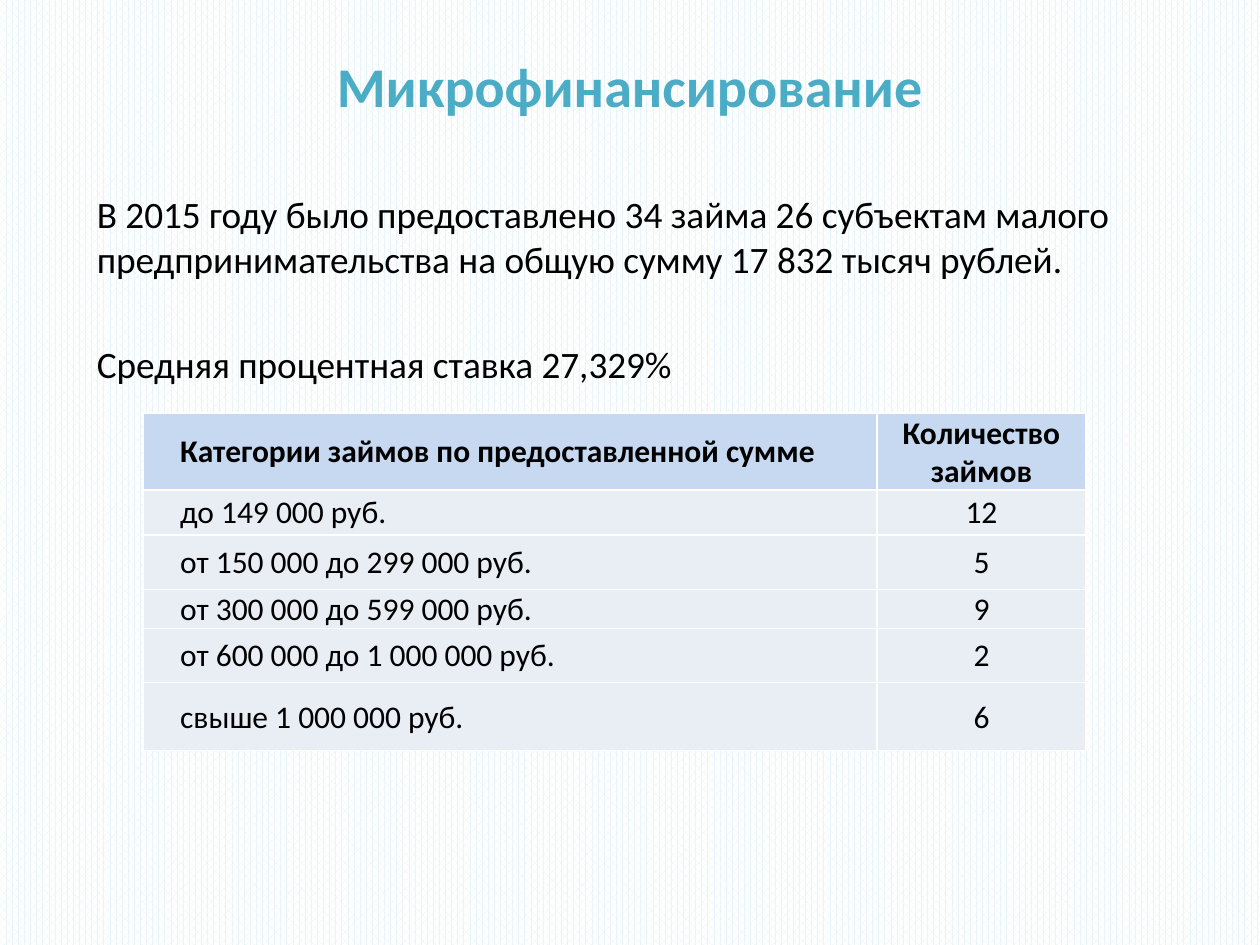
from typing import NamedTuple

from lxml import etree
from pptx import Presentation
from pptx.dml.color import RGBColor
from pptx.enum.dml import MSO_PATTERN
from pptx.enum.text import MSO_ANCHOR, PP_ALIGN
from pptx.oxml.ns import qn
from pptx.util import Inches, Pt

LEFT, CENTER = PP_ALIGN.LEFT, PP_ALIGN.CENTER
MIDDLE, TOP = MSO_ANCHOR.MIDDLE, MSO_ANCHOR.TOP
DOTS = MSO_PATTERN.PERCENT_70

FONT = "Calibri"
W, H = 10, 7.5
COLORS = {
    "title": "4BACC6",
    "text": "000000",
    "header": "C6D9F1",
    "row": "E9EDF4",
    "white": "FFFFFF",
    "dots": "E8F4F8",
}


class Box(NamedTuple):
    """Place and size as shares of the slide."""
    x: float
    y: float
    w: float
    h: float

    def emu(self) -> tuple:
        return (Inches(self.x * W), Inches(self.y * H),
                Inches(self.w * W), Inches(self.h * H))


class LoanRow(NamedTuple):
    category: str
    count: str
    height: float  # inches


TITLE_BOX = Box(0.05, 0.04, 0.9, 0.1)
BODY_BOX = Box(0.067, 0.196, 0.898, 0.2)
TABLE_BOX = Box(0.114, 0.437, 0.748, 0.357)
COLUMN_SHARES = (0.778, 0.222)
CATEGORY_INDENT = 0.29

LOANS = [
    LoanRow("Категории займов по предоставленной сумме", "Количество займов", 0.61),
    LoanRow("до 149 000 руб.", "12", 0.36),
    LoanRow("от 150 000 до 299 000 руб.", "5", 0.43),
    LoanRow("от 300 000 до 599 000 руб.", "9", 0.31),
    LoanRow("от 600 000 до 1 000 000 руб.", "2", 0.43),
    LoanRow("свыше 1 000 000 руб.", "6", 0.54),
]


def rgb(name: str) -> RGBColor:
    return RGBColor.from_string(COLORS[name])


def write(p, text: str, *, size: float, color: str = "text",
          bold: bool = False, align=LEFT, before: float = 0) -> None:
    p.alignment = align
    p.space_before = Pt(before)
    r = p.add_run()
    r.text = text
    r.font.name, r.font.size, r.font.bold = FONT, Pt(size), bold
    r.font.color.rgb = rgb(color)


def add_borders(cell, color: str, width: float) -> None:
    tc_pr = cell._tc.get_or_add_tcPr()
    for i, side in enumerate(("a:lnL", "a:lnR", "a:lnT", "a:lnB")):
        ln = etree.Element(qn(side), w=str(Pt(width)))
        fill = etree.SubElement(ln, qn("a:solidFill"))
        etree.SubElement(fill, qn("a:srgbClr"), val=COLORS[color])
        tc_pr.insert(i, ln)  # borders come before the fill


def fill_cell(cell, text: str, *, header: bool, align, indent: float) -> None:
    cell.fill.solid()
    cell.fill.fore_color.rgb = rgb("header" if header else "row")
    cell.vertical_anchor = MIDDLE
    cell.margin_left = Inches(indent)
    cell.margin_right = cell.margin_top = Inches(0.01)
    cell.margin_bottom = 0
    write(cell.text_frame.paragraphs[0], text, size=18, bold=header, align=align)
    add_borders(cell, "white", 1)


def add_loan_table(slide, box: Box, loans: list[LoanRow]) -> None:
    table = slide.shapes.add_table(len(loans), len(COLUMN_SHARES), *box.emu()).table
    for column, share in zip(table.columns, COLUMN_SHARES):
        column.width = Inches(box.w * W * share)
    for i, loan in enumerate(loans):
        table.rows[i].height = Inches(loan.height)
        header = i == 0
        fill_cell(table.cell(i, 0), loan.category, header=header,
                  align=LEFT, indent=CATEGORY_INDENT)
        fill_cell(table.cell(i, 1), loan.count, header=header,
                  align=CENTER, indent=0.01)


def main() -> None:
    prs = Presentation()
    prs.slide_width, prs.slide_height = Inches(W), Inches(H)
    slide = prs.slides.add_slide(prs.slide_layouts[5])

    # Background
    bg = slide.background.fill
    bg.patterned()
    bg.pattern = DOTS
    bg.fore_color.rgb, bg.back_color.rgb = rgb("dots"), rgb("white")

    # Title
    title = slide.shapes.title
    title.left, title.top, title.width, title.height = TITLE_BOX.emu()
    title.text_frame.vertical_anchor = MIDDLE
    write(title.text_frame.paragraphs[0], "Микрофинансирование",
          size=32, color="title", bold=True, align=CENTER)

    # Summary
    tf = slide.shapes.add_textbox(*BODY_BOX.emu()).text_frame
    tf.word_wrap = True
    tf.vertical_anchor = TOP
    write(tf.paragraphs[0],
          "В 2015 году было предоставлено 34 займа 26 субъектам малого "
          "предпринимательства на общую сумму 17 832 тысяч рублей.", size=21.3)
    write(tf.add_paragraph(), "Средняя процентная ставка 27,329%",
          size=21.3, before=34.5)

    # Loans by amount
    add_loan_table(slide, TABLE_BOX, LOANS)

    prs.save("out.pptx")


if __name__ == "__main__":
    main()
